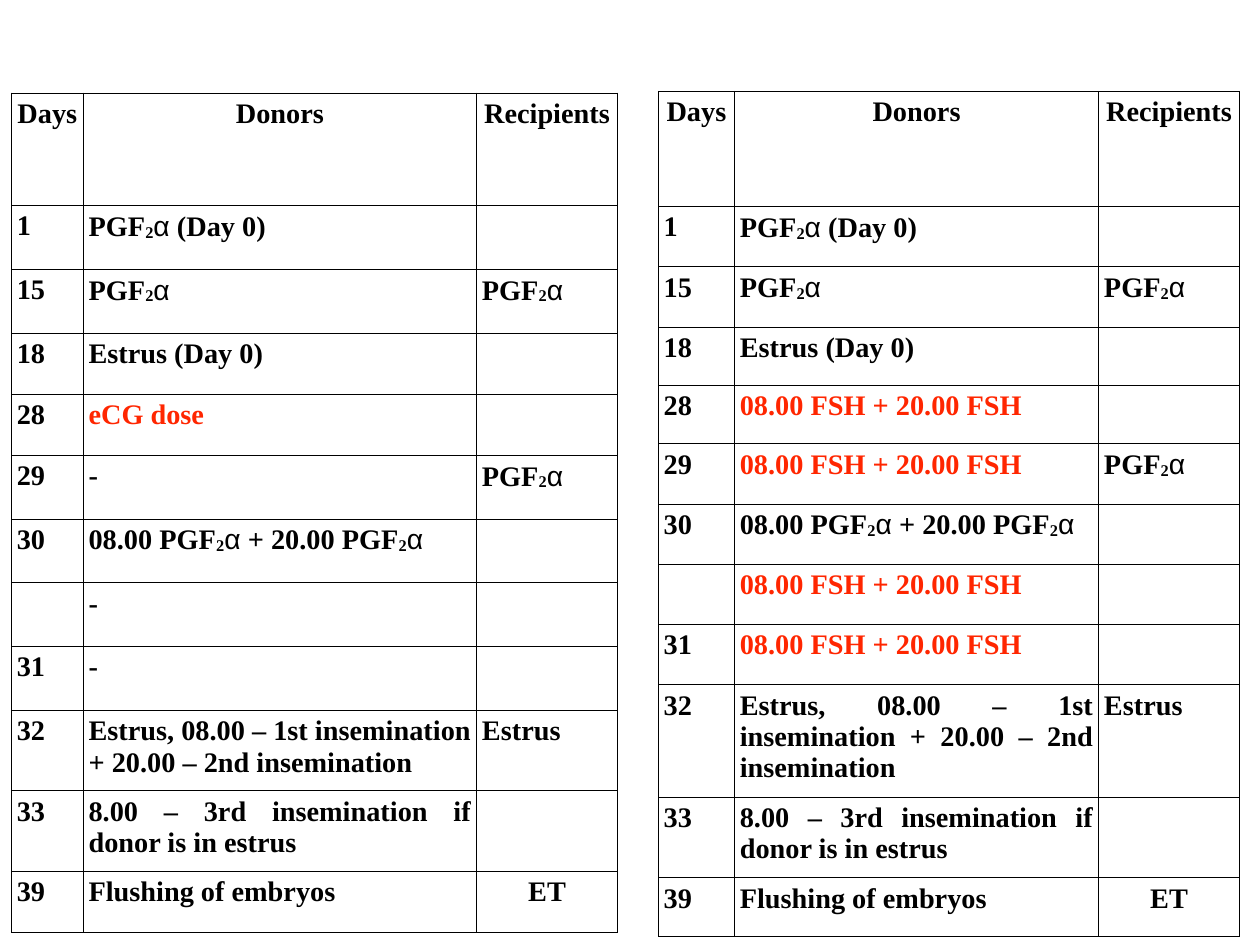
from lxml.etree import SubElement
from pptx import Presentation
from pptx.dml.color import RGBColor
from pptx.enum.text import PP_ALIGN
from pptx.oxml.ns import qn
from pptx.util import Inches, Pt

COLORS = {"text": "000000", "border": "000000", "hormone": "FF2600"}
MARGINS = {
    side: Inches(0.06)
    for side in ("margin_left", "margin_right", "margin_top", "margin_bottom")
}
PLAIN = {"name": "Times New Roman", "size": Pt(23), "bold": True}
GREEK = {"name": "Arial", "size": Pt(23), "bold": False}

FSH = "08.00 FSH + 20.00 FSH"
PGF_TWICE = "08.00 PGF2α + 20.00 PGF2α"
INSEMINATION = "Estrus, 08.00 – 1st insemination + 20.00 – 2nd insemination"
THIRD = "8.00 – 3rd insemination if donor is in estrus"

# Day, donors in the first protocol, donors in the FSH protocol, recipients
SCHEDULE = [
    ("Days", "Donors", "Donors", "Recipients"),
    ("1", "PGF2α (Day 0)", "PGF2α (Day 0)", ""),
    ("15", "PGF2α", "PGF2α", "PGF2α"),
    ("18", "Estrus (Day 0)", "Estrus (Day 0)", ""),
    ("28", "eCG dose", FSH, ""),
    ("29", "-", FSH, "PGF2α"),
    ("30", PGF_TWICE, PGF_TWICE, ""),
    ("", "-", FSH, ""),
    ("31", "-", FSH, ""),
    ("32", INSEMINATION, INSEMINATION, "Estrus"),
    ("33", THIRD, THIRD, ""),
    ("39", "Flushing of embryos", "Flushing of embryos", "ET"),
]
CENTERED = {"Days", "Donors", "Recipients", "ET"}
HORMONES = {"eCG dose", FSH}

PROTOCOLS = [
    {
        "donors": 1, "left": 0.13, "top": 1.05, "columns": [0.81, 4.44, 1.59],
        "rows": [1.27, 0.72, 0.72, 0.69, 0.69] + [0.72] * 4 + [0.91, 0.91, 0.69],
    },
    {
        "donors": 2, "left": 7.43, "top": 1.03, "columns": [0.86, 4.11, 1.59],
        "rows": [1.3, 0.68, 0.68, 0.66, 0.66] + [0.68] * 4 + [1.27, 0.91, 0.66],
    },
]


def add_text(paragraph, text, style, color, baseline=None):
    run = paragraph.add_run()
    run.text = text
    for attribute, value in style.items():
        setattr(run.font, attribute, value)
    run.font.color.rgb = RGBColor.from_string(color)
    if baseline:
        run.font._element.set("baseline", baseline)


def format_cell(cell):
    """Give the cell its margins, thin borders and no fill."""
    for attribute, value in MARGINS.items():
        setattr(cell, attribute, value)
    properties = cell._tc.get_or_add_tcPr()
    for side in ("a:lnL", "a:lnR", "a:lnT", "a:lnB"):
        border = SubElement(properties, qn(side), w=str(Pt(0.5)))
        fill = SubElement(border, qn("a:solidFill"))
        SubElement(fill, qn("a:srgbClr"), val=COLORS["border"])
    cell.fill.background()


prs = Presentation()
prs.slide_width, prs.slide_height = Inches(14.22), Inches(10.67)
slide = prs.slides.add_slide(prs.slide_layouts[6])

for protocol in PROTOCOLS:
    widths, heights = protocol["columns"], protocol["rows"]
    timetable = slide.shapes.add_table(
        len(heights), len(widths),
        Inches(protocol["left"]), Inches(protocol["top"]),
        Inches(sum(widths)), Inches(sum(heights)),
    ).table
    timetable.first_row = timetable.horz_banding = False
    for column, width in zip(timetable.columns, widths):
        column.width = Inches(width)
    for row, height in zip(timetable.rows, heights):
        row.height = Inches(height)

    for row, entry in zip(timetable.rows, SCHEDULE):
        day, donors, recipients = entry[0], entry[protocol["donors"]], entry[3]
        for cell, content in zip(row.cells, (day, donors, recipients)):
            format_cell(cell)
            paragraph = cell.text_frame.paragraphs[0]
            paragraph.alignment = (
                PP_ALIGN.CENTER if content in CENTERED else PP_ALIGN.JUSTIFY
            )
            color = COLORS["hormone" if content in HORMONES else "text"]
            for index, part in enumerate(content.split("2α")):
                if index:
                    add_text(paragraph, "2", PLAIN, color, baseline="-6000")
                    add_text(paragraph, "α", GREEK, color)
                if part:
                    add_text(paragraph, part, PLAIN, color)

prs.save("out.pptx")
